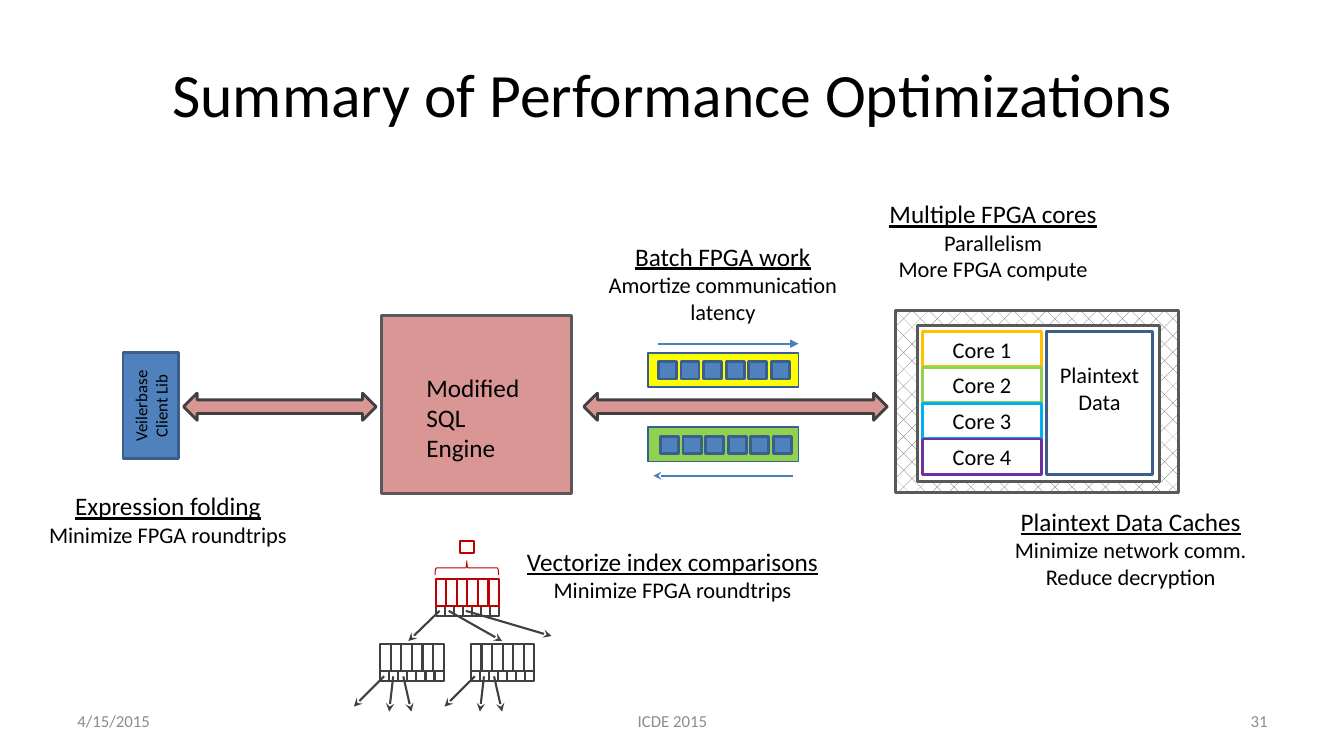
from dataclasses import dataclass
from typing import Optional, Union

import lxml.etree
import pptx
import pptx.dml.color
import pptx.enum.dml
import pptx.enum.shapes
import pptx.enum.text
import pptx.oxml.ns
import pptx.shapes.autoshape
import pptx.shapes.shapetree
import pptx.text.text
import pptx.util

Inches = pptx.util.Inches
Kind = pptx.enum.shapes.MSO_SHAPE
Align = pptx.enum.text.PP_ALIGN
Anchor = pptx.enum.text.MSO_ANCHOR
Shape = pptx.shapes.autoshape.Shape
Board = Union[pptx.shapes.shapetree.SlideShapes, pptx.shapes.shapetree.GroupShapes]


@dataclass(frozen=True)
class Theme:
    font: str = "Calibri"
    black: str = "000000"
    white: str = "FFFFFF"
    muted: str = "8C8C8C"
    dark: str = "404040"
    gray: str = "595959"
    rose: str = "D99694"
    red: str = "C00000"
    blue: str = "4F81BD"
    navy: str = "3A5F8C"
    edge: str = "376092"
    arrow: str = "4B7EBC"
    yellow: str = "FFFF00"
    green: str = "92D050"
    amber: str = "FFC000"
    sky: str = "00B0F0"
    purple: str = "7030A0"
    title: int = 44
    head: int = 18
    body: int = 16
    small: int = 12


THEME = Theme()


@dataclass(frozen=True)
class Box:
    left: float
    top: float
    width: float
    height: float
    fill: Optional[str] = None
    line: str = THEME.dark
    weight: float = 2
    kind: Kind = Kind.RECTANGLE
    turn: float = 0
    text: str = ""
    size: int = THEME.body


@dataclass(frozen=True)
class Label:
    left: float
    top: float
    width: float
    height: float
    lines: tuple[str, ...]
    align: Align = Align.CENTER
    sizes: tuple[int, int] = (THEME.head, THEME.body)
    color: str = THEME.black
    mark: bool = True
    wrap: bool = False
    anchor: Anchor = Anchor.TOP


@dataclass(frozen=True)
class Arrow:
    start: tuple[float, float]
    end: tuple[float, float]
    color: str = THEME.dark
    head: str = "stealth"


@dataclass(frozen=True)
class Batch:
    left: float
    top: float
    fill: str
    first: float
    arrow: Arrow


def paint(name: str) -> pptx.dml.color.RGBColor:
    return pptx.dml.color.RGBColor.from_string(name)


def style(para: pptx.text.text._Paragraph, size: int, align: Align, color: str = THEME.black) -> None:
    para.alignment = align
    para.font.name = THEME.font
    para.font.size = pptx.util.Pt(size)
    para.font.color.rgb = paint(color)


def draw_box(board: Board, box: Box) -> Shape:
    shape = board.add_shape(box.kind, Inches(box.left), Inches(box.top), Inches(box.width), Inches(box.height))
    shape.shadow.inherit = False
    shape.rotation = box.turn
    if box.fill:
        shape.fill.solid()
        shape.fill.fore_color.rgb = paint(box.fill)
    else:
        shape.fill.background()
    shape.line.color.rgb = paint(box.line)
    shape.line.width = pptx.util.Pt(box.weight)
    if box.text:
        frame = shape.text_frame
        frame.word_wrap = True
        frame.vertical_anchor = Anchor.MIDDLE
        frame.text = box.text
        style(frame.paragraphs[0], box.size, Align.CENTER)
    return shape


def draw_label(board: Board, label: Label) -> None:
    place = board.add_textbox(Inches(label.left), Inches(label.top), Inches(label.width), Inches(label.height))
    frame = place.text_frame
    frame.word_wrap = label.wrap
    frame.vertical_anchor = label.anchor
    for rank, line in enumerate(label.lines):
        para = frame.add_paragraph() if rank else frame.paragraphs[0]
        para.text = line
        style(para, label.sizes[min(rank, 1)], label.align, label.color)
        para.font.underline = label.mark and rank == 0


def draw_arrow(board: Board, arrow: Arrow) -> None:
    points = [Inches(value) for value in arrow.start + arrow.end]
    link = board.add_connector(pptx.enum.shapes.MSO_CONNECTOR.STRAIGHT, *points)
    link.line.color.rgb = paint(arrow.color)
    link.line.width = pptx.util.Pt(1.5)
    props = link._element.spPr
    tip = lxml.etree.SubElement(props.get_or_add_ln(), pptx.oxml.ns.qn("a:tailEnd"))
    tip.set("type", arrow.head)
    lxml.etree.SubElement(props, pptx.oxml.ns.qn("a:effectLst"))


def draw_node(board: Board, left: float, top: float, color: str) -> None:
    group = board.add_group_shape().shapes
    for count, drop, height, line in ((7, 0.27, 0.1, THEME.dark), (6, 0, 0.27, color)):
        step = 0.63 / count
        for spot in range(count):
            draw_box(group, Box(left + spot * step, top + drop, step, height, line=line, weight=1.5))


def draw_batch(board: Board, batch: Batch) -> None:
    group = board.add_group_shape().shapes
    draw_box(group, Box(batch.left, batch.top, 1.49, 0.34, batch.fill, THEME.edge, 1.25))
    for spot in range(6):
        draw_box(group, Box(batch.first + spot * 0.224, batch.top + 0.09, 0.18, 0.17, THEME.blue, THEME.navy))
    draw_arrow(group, batch.arrow)


def draw_chip(board: Board) -> None:
    group = board.add_group_shape().shapes
    frame = draw_box(group, Box(8.88, 3.08, 2.81, 1.81, THEME.white, THEME.gray))
    frame.fill.patterned()
    frame.fill.pattern = pptx.enum.dml.MSO_PATTERN.DIAGONAL_BRICK
    frame.fill.fore_color.rgb = paint(THEME.gray)
    frame.fill.back_color.rgb = paint(THEME.white)
    draw_box(group, Box(9.1, 3.23, 2.4, 1.55, THEME.white, THEME.gray))
    for rank, color in enumerate((THEME.amber, THEME.green, THEME.sky, THEME.purple)):
        draw_box(group, Box(9.15, 3.29 + rank * 0.355, 1.18, 0.35, THEME.white, color, text=f"Core {rank + 1}"))
    draw_box(group, Box(10.38, 3.29, 1.05, 1.42, THEME.white, THEME.navy, text="Plaintext Data\nCache"))


def draw_tree(board: Board) -> None:
    draw_node(board, 4.32, 5.74, THEME.red)
    for end, start in (((4.05, 6.36), 4.36), ((4.98, 6.36), 4.45), ((5.47, 6.31), 4.62)):
        draw_arrow(board, Arrow((start, 6.06), end))
    for left in (4.67, 3.77):
        draw_node(board, left, 6.39, THEME.dark)
        for start, shift, foot in ((0.04, -0.26, 7.01), (0.13, 0.09, 7.06), (0.23, 0.31, 7.06)):
            draw_arrow(board, Arrow((left + start, 6.71), (left + shift, foot)))
    draw_box(board, Box(4.56, 5.37, 0.14, 0.12, line=THEME.red, weight=1.5))
    draw_box(board, Box(4.56, 5.32, 0.14, 0.63, line=THEME.red, weight=0.75, kind=Kind.LEFT_BRACE, turn=90))


LABELS = (
    Label(5.92, 2.34, 2.5, 0.94, ("Batch FPGA work", "Amortize communication\nlatency")),
    Label(8.71, 1.92, 2.28, 0.94, ("Multiple FPGA cores", "Parallelism", "More FPGA compute")),
    Label(9.95, 4.97, 2.53, 0.98, ("Plaintext Data Caches", "Minimize network comm.", "Reduce decryption")),
    Label(4.13, 3.64, 1.31, 0.71, ("Modified\nSQL Engine",), Align.LEFT, mark=False),
    Label(5.11, 5.37, 3.12, 0.67, ("Vectorize index comparisons", "Minimize FPGA roundtrips")),
    Label(0.37, 4.82, 2.59, 0.67, ("Expression folding", "Minimize FPGA roundtrips")),
    *(Label(left, 6.95, width, 0.4, (text,), align, (THEME.small, THEME.small), THEME.muted, False, True, Anchor.MIDDLE)
      for left, width, text, align in ((0.67, 3.11, "4/15/2015", Align.LEFT),
                                       (4.56, 4.22, "ICDE 2015", Align.CENTER),
                                       (9.56, 3.11, "31", Align.RIGHT))),
)
BOXES = (
    Box(5.79, 3.9, 3.01, 0.27, THEME.rose, kind=Kind.LEFT_RIGHT_ARROW),
    Box(1.82, 3.9, 1.91, 0.27, THEME.rose, kind=Kind.LEFT_RIGHT_ARROW),
    Box(3.78, 3.13, 1.89, 1.77, THEME.rose, THEME.gray),
    Box(0.97, 3.75, 1.05, 0.55, THEME.blue, THEME.navy, turn=270, text="Veilerbase Client Lib", size=THEME.small),
)
BATCHES = (
    Batch(6.43, 3.5, THEME.yellow, 6.53, Arrow((6.53, 3.41), (7.92, 3.41), THEME.arrow, "triangle")),
    Batch(6.43, 4.24, THEME.green, 6.55, Arrow((7.87, 4.72), (6.48, 4.72), THEME.arrow)),
)


def main() -> None:
    deck = pptx.Presentation()
    deck.slide_width, deck.slide_height = Inches(13.33), Inches(7.5)
    board = deck.slides.add_slide(deck.slide_layouts[5]).shapes
    title = board.title
    title.left, title.top, title.width, title.height = map(Inches, (0.67, 0.3, 12, 1.25))
    title.text_frame.text = "Summary of Performance Optimizations"
    title.text_frame.vertical_anchor = Anchor.MIDDLE
    style(title.text_frame.paragraphs[0], THEME.title, Align.CENTER)
    for box in BOXES:
        draw_box(board, box)
    draw_chip(board)
    for batch in BATCHES:
        draw_batch(board, batch)
    draw_tree(board)
    for label in LABELS:
        draw_label(board, label)
    deck.save("out.pptx")


if __name__ == "__main__":
    main()
